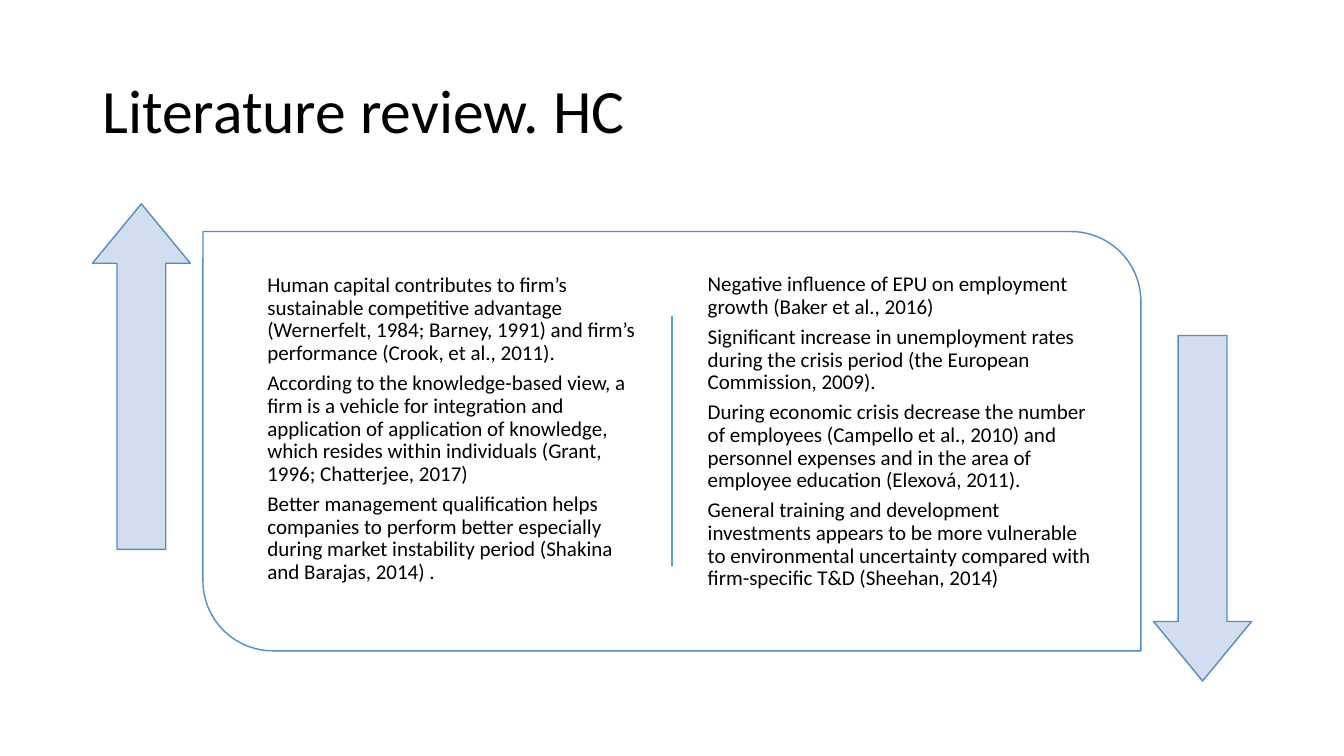
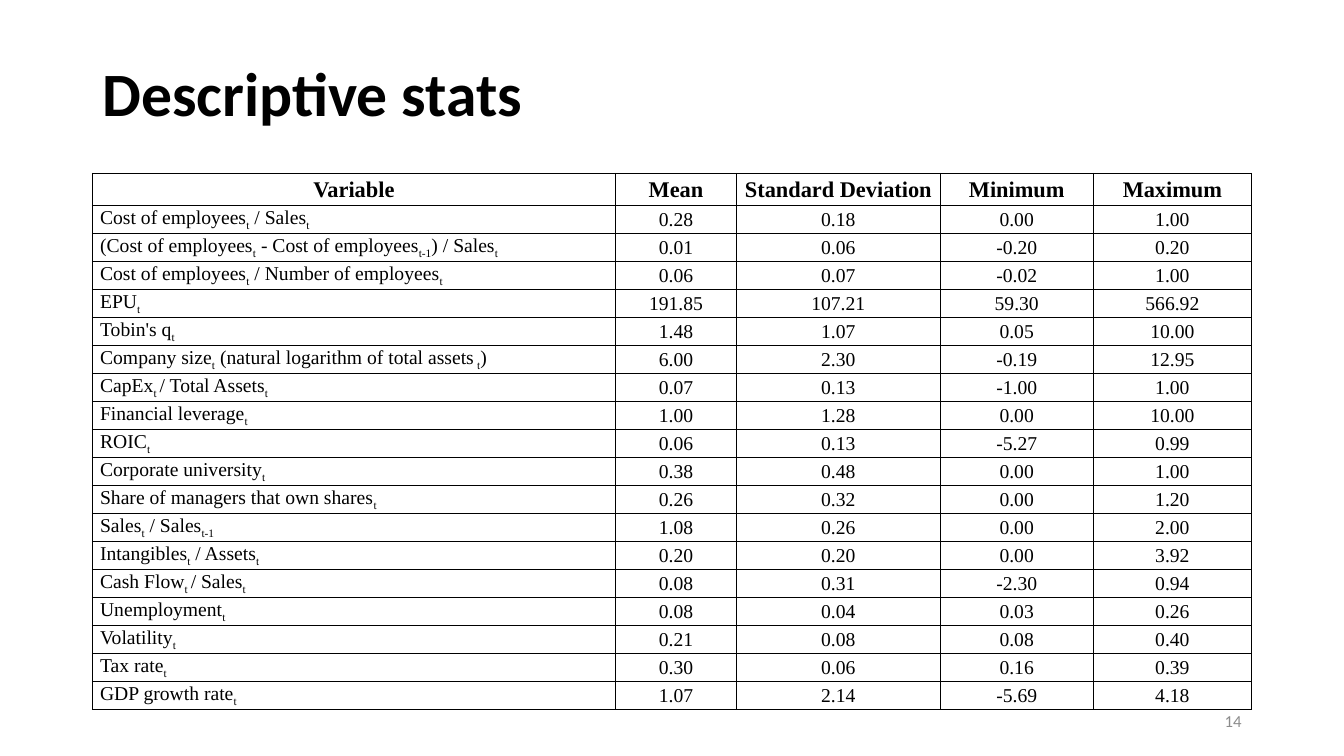
"""Build two slides: a human capital literature review and descriptive statistics."""
from lxml import etree
from pptx import Presentation
from pptx.dml.color import RGBColor
from pptx.enum.shapes import MSO_CONNECTOR, MSO_SHAPE
from pptx.enum.text import MSO_ANCHOR, PP_ALIGN
from pptx.oxml.ns import qn
from pptx.util import Pt

STRAIGHT = MSO_CONNECTOR.STRAIGHT
PANEL, UP, DOWN = MSO_SHAPE.ROUND_2_DIAG_RECTANGLE, MSO_SHAPE.UP_ARROW, MSO_SHAPE.DOWN_ARROW
TOP, MIDDLE, BOTTOM = MSO_ANCHOR.TOP, MSO_ANCHOR.MIDDLE, MSO_ANCHOR.BOTTOM
LEFT, CENTER, RIGHT = PP_ALIGN.LEFT, PP_ALIGN.CENTER, PP_ALIGN.RIGHT

COLORS = {
    "text": "000000", "page": "8C8C8C", "panel": "FFFFFF", "outline": "538DC1",
    "divider": "5B9BD5", "arrow": "D2DEEF", "grid": "000000",
}
SANS, SERIF = "Calibri", "Times New Roman"
MARGIN, CONTENT_WIDTH = 66, 828

REVIEW_TITLE = "Literature review. HC"
POSITIVE = [
    "Human capital contributes to firm’s sustainable competitive advantage (Wernerfelt, 1984; "
    "Barney, 1991) and firm’s performance (Crook, et al., 2011).",
    "According to the knowledge-based view, a firm is a vehicle for integration and application "
    "of application of knowledge, which resides within individuals (Grant, 1996; Chatterjee, 2017)",
    "Better management qualification helps companies to perform better especially during market "
    "instability period (Shakina and Barajas, 2014) .",
]
NEGATIVE = [
    "Negative influence of EPU on employment growth (Baker et al., 2016)",
    "Significant increase in unemployment rates during the crisis period (the European "
    "Commission, 2009).",
    "During economic crisis decrease the number of employees (Campello et al., 2010) and "
    "personnel expenses and in the area of employee education (Elexová, 2011).",
    "General training and development investments appears to be more vulnerable to environmental "
    "uncertainty compared with firm-specific T&D (Sheehan, 2014)",
]
COLUMNS = [(POSITIVE, (186.5, 191.5, 279.5, 249)), (NEGATIVE, (501, 190.8, 286, 250.5))]
ARROWS = [(UP, (66, 145.6, 70, 246.8)), (DOWN, (824, 239.6, 70, 246.8))]

STATS_TITLE = "Descriptive stats"
PAGE_NUMBER = "14"
HEADER = ("Variable", "Mean", "Standard Deviation", "Minimum", "Maximum")
STATS = [
    ("Cost of employees|t| / Sales|t|", "0.28", "0.18", "0.00", "1.00"),
    ("(Cost of employees|t| - Cost of employees|t-1|) / Sales|t|", "0.01", "0.06", "-0.20", "0.20"),
    ("Cost of employees|t| / Number of employees|t|", "0.06", "0.07", "-0.02", "1.00"),
    ("EPU|t|", "191.85", "107.21", "59.30", "566.92"),
    ("Tobin's q|t|", "1.48", "1.07", "0.05", "10.00"),
    ("Company size|t| (natural logarithm of total assets| t|)", "6.00", "2.30", "-0.19", "12.95"),
    ("CapEx|t |/ Total Assets|t|", "0.07", "0.13", "-1.00", "1.00"),
    ("Financial leverage|t|", "1.00", "1.28", "0.00", "10.00"),
    ("ROIC|t|", "0.06", "0.13", "-5.27", "0.99"),
    ("Corporate university|t|", "0.38", "0.48", "0.00", "1.00"),
    ("Share of managers that own shares|t|", "0.26", "0.32", "0.00", "1.20"),
    ("Sales|t| / Sales|t-1|", "1.08", "0.26", "0.00", "2.00"),
    ("Intangibles|t| / Assets|t|", "0.20", "0.20", "0.00", "3.92"),
    ("Cash Flow|t |/ Sales|t|", "0.08", "0.31", "-2.30", "0.94"),
    ("Unemployment|t|", "0.08", "0.04", "0.03", "0.26"),
    ("Volatility|t|", "0.21", "0.08", "0.08", "0.40"),
    ("Tax rate|t|", "0.30", "0.06", "0.16", "0.39"),
    ("GDP growth rate|t|", "1.07", "2.14", "-5.69", "4.18"),
]
COLUMN_WIDTHS = (373.7, 86.4, 145.5, 109.4, 113)
HEADER_HEIGHT, ROW_HEIGHT = 23, 20


def rgb(key):
    return RGBColor.from_string(COLORS[key])


def points(box):
    return [Pt(value) for value in box]


def style(paragraph, size, font=SANS, color="text", bold=False, align=LEFT, spacing=0.9, after=0):
    paragraph.font.size, paragraph.font.name, paragraph.font.bold = Pt(size), font, bold
    paragraph.font.color.rgb = rgb(color)
    paragraph.alignment, paragraph.line_spacing, paragraph.space_after = align, spacing, Pt(after)


def add_text(slide, box, paragraphs, size, anchor=TOP, inset=None, **look):
    frame = slide.shapes.add_textbox(*points(box)).text_frame
    frame.word_wrap, frame.vertical_anchor = True, anchor
    if inset is not None:
        frame.margin_left = frame.margin_right = frame.margin_top = frame.margin_bottom = Pt(inset)
    frame.text = "\n".join(paragraphs)
    for paragraph in frame.paragraphs:
        style(paragraph, size, **look)


def add_title(slide, text, top, height, anchor, bold=False):
    add_text(slide, (MARGIN, top, CONTENT_WIDTH, height), [text], 44, anchor, bold=bold)


def add_figure(slide, kind, box, fill, adjustments):
    figure = slide.shapes.add_shape(kind, *points(box))
    figure.shadow.inherit = False
    figure.fill.solid()
    figure.fill.fore_color.rgb = rgb(fill)
    figure.line.color.rgb, figure.line.width = rgb("outline"), Pt(1)
    for index, value in enumerate(adjustments):
        figure.adjustments[index] = value


def add_divider(slide, x, top, bottom):
    divider = slide.shapes.add_connector(STRAIGHT, *points((x, top, x, bottom)))
    divider.line.color.rgb, divider.line.width = rgb("divider"), Pt(1)
    etree.SubElement(divider.element.spPr, qn("a:effectLst"))


def add_borders(cell):
    properties = cell._tc.get_or_add_tcPr()
    for side in ("lnL", "lnR", "lnT", "lnB"):
        line = etree.SubElement(properties, qn(f"a:{side}"), w=str(Pt(1)))
        fill = etree.SubElement(line, qn("a:solidFill"))
        etree.SubElement(fill, qn("a:srgbClr"), val=COLORS["grid"])


def fill_cell(cell, text, is_header, align):
    add_borders(cell)
    cell.fill.background()
    cell.vertical_anchor = MIDDLE
    cell.margin_left = cell.margin_right = Pt(4.8 if is_header else 5.5)
    cell.margin_top = cell.margin_bottom = Pt(0)
    paragraph = cell.text_frame.paragraphs[0]
    style(paragraph, 16 if is_header else 14, SERIF, bold=is_header, align=align, spacing=1)
    for index, part in enumerate(text.split("|")):
        if part:
            run = paragraph.add_run()
            run.text = part
            if index % 2:
                run.font._element.set("baseline", "-25000")


def add_stats(slide):
    rows = [HEADER, *STATS]
    height = HEADER_HEIGHT + ROW_HEIGHT * len(STATS)
    box = points((MARGIN, 124, sum(COLUMN_WIDTHS), height))
    table = slide.shapes.add_table(len(rows), len(HEADER), *box).table
    table.first_row = table.horz_banding = False
    for column, width in zip(table.columns, COLUMN_WIDTHS):
        column.width = Pt(width)
    for r, values in enumerate(rows):
        table.rows[r].height = Pt(ROW_HEIGHT if r else HEADER_HEIGHT)
        for c, text in enumerate(values):
            fill_cell(table.cell(r, c), text, r == 0, LEFT if r and c == 0 else CENTER)


def build_review(slide):
    add_title(slide, REVIEW_TITLE, 28.8, 104.4, MIDDLE)
    add_figure(slide, PANEL, (145, 165.4, 670, 299.5), "panel", (0, 0.167))
    add_divider(slide, 480, 226, 404)
    for paragraphs, box in COLUMNS:
        add_text(slide, box, paragraphs, 15, inset=4.5, after=5.25)
    for kind, box in ARROWS:
        add_figure(slide, kind, box, "arrow", (0.498, 0.607))


def build_stats(slide):
    add_title(slide, STATS_TITLE, 23, 73.4, BOTTOM, bold=True)
    add_text(slide, (678, 500.4, 216, 28.8), [PAGE_NUMBER], 12, MIDDLE,
             color="page", align=RIGHT, spacing=1, after=6)
    add_stats(slide)


def main():
    deck = Presentation()
    deck.slide_width, deck.slide_height = Pt(960), Pt(540)
    for build in (build_review, build_stats):
        build(deck.slides.add_slide(deck.slide_layouts[6]))
    deck.save("out.pptx")


if __name__ == "__main__":
    main()
